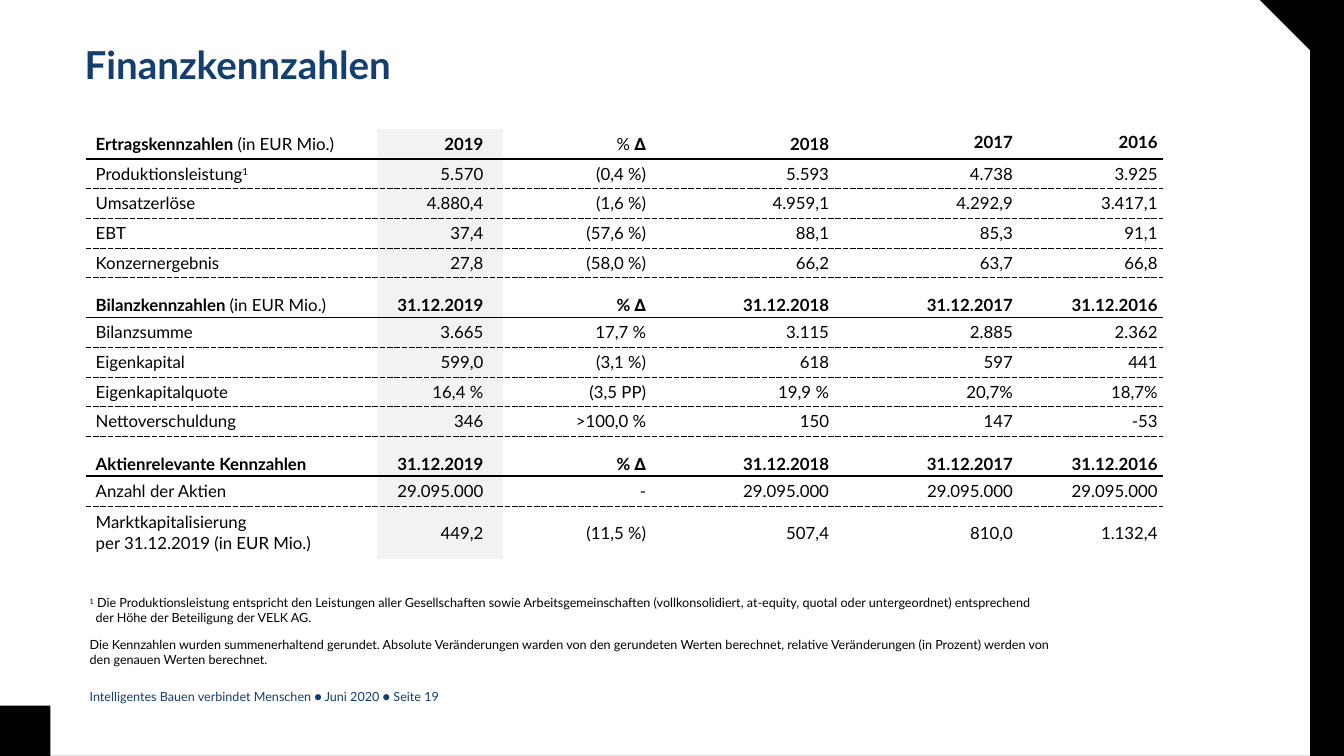
import math

import lxml.etree
import pptx
import pptx.dml.color
import pptx.enum.text
import pptx.oxml.ns
import pptx.util

Inches = pptx.util.Inches
Pt = pptx.util.Pt
ALIGN = pptx.enum.text.PP_ALIGN
ANCHOR = pptx.enum.text.MSO_ANCHOR
qn = pptx.oxml.ns.qn

COLORS = {"black": "000000", "navy": "143E6F", "shade": "F2F2F2"}
WIDTH, HEIGHT = 26.67, 15
UNIT = "(in EUR Mio.)"
BOLD, REGULAR, RAISED = {"bold": True}, {"bold": False}, {"baseline": 30}
DATES = ["31.12.2019", "% ∆", "31.12.2018", "31.12.2017", "31.12.2016"]

# Each section: heading runs, column headings, rows of label runs and values
SECTIONS = [
    ([("Ertragskennzahlen ", BOLD), (UNIT, REGULAR)],
     ["2019", [("% ", REGULAR), ("∆", BOLD)], "2018", "2017", "2016"],
     [([("Produktionsleistung", {}), ("1", RAISED)],
       ["5.570", "(0,4 %)", "5.593", "4.738", "3.925"]),
      ("Umsatzerlöse", ["4.880,4", "(1,6 %)", "4.959,1", "4.292,9", "3.417,1"]),
      ("EBT", ["37,4", "(57,6 %)", "88,1", "85,3", "91,1"]),
      ("Konzernergebnis", ["27,8", "(58,0 %)", "66,2", "63,7", "66,8"])]),
    ([("Bilanzkennzahlen ", BOLD), (UNIT, REGULAR)], DATES,
     [("Bilanzsumme", ["3.665", "17,7 %", "3.115", "2.885", "2.362"]),
      ("Eigenkapital", ["599,0", "(3,1 %)", "618", "597", "441"]),
      ("Eigenkapitalquote", ["16,4 %", "(3,5 PP)", "19,9 %", "20,7%", "18,7%"]),
      ("Nettoverschuldung", ["346", ">100,0 %", "150", "147", "-53"])]),
    ("Aktienrelevante Kennzahlen", DATES,
     [("Anzahl der Aktien",
       ["29.095.000", "-", "29.095.000", "29.095.000", "29.095.000"]),
      ("Marktkapitalisierung\nper 31.12.2019 (in EUR Mio.)",
       ["449,2", "(11,5 %)", "507,4", "810,0", "1.132,4"])]),
]
COLUMN_WIDTHS = [5.78, 2.5, 3.23, 3.63, 3.36, 2.87]
ROW_HEIGHT, SECTION_HEIGHT, LAST_HEIGHT = 0.59, 0.79, 1.06


def rgb(name):
    return pptx.dml.color.RGBColor.from_string(COLORS[name])


def write_runs(paragraph, content, size, color="black", bold=False):
    """Write a string or a list of (text, overrides); a newline breaks the line."""
    runs = [(content, {})] if isinstance(content, str) else content
    for text, overrides in runs:
        for index, line in enumerate(text.split("\n")):
            if index:
                paragraph.add_line_break()
            run = paragraph.add_run()
            run.text = line
            formats = {"name": "Lato", "size": Pt(size), "bold": overrides.get("bold", bold)}
            for attribute, value in formats.items():
                setattr(run.font, attribute, value)
            run.font.color.rgb = rgb(color)
            if "baseline" in overrides:
                run.font._element.set("baseline", str(overrides["baseline"] * 1000))


def add_text(slide, box, content, size, color="black", bold=False, inset=True):
    shape = slide.shapes.add_textbox(*map(Inches, box))
    frame = shape.text_frame
    frame.word_wrap = True
    if not inset:
        for side in ("left", "top", "right", "bottom"):
            setattr(frame, f"margin_{side}", 0)
    write_runs(frame.paragraphs[0], content, size, color, bold)
    return frame.paragraphs[0]


def add_frame(slide, box):
    """Black border whose opening is rounded at top right and bottom left."""
    left, top, width, height = box
    right, bottom = left + width, top + height
    inner_left, inner_top = left + 0.21, top + 0.14
    inner_right, inner_bottom = right - 0.21, bottom - 0.14
    radius, steps = 2.15, 40

    def arc(center_x, center_y, start):
        angles = [math.radians(start - 90 * step / steps) for step in range(steps + 1)]
        return [(center_x + radius * math.cos(angle), center_y + radius * math.sin(angle))
                for angle in angles]

    opening = [(inner_left, inner_top)]
    opening += arc(inner_left + radius, inner_bottom - radius, 180)
    opening += [(inner_right, inner_bottom)]
    opening += arc(inner_right - radius, inner_top + radius, 0)
    outline = [(left, top), (right, top), (right, bottom), (left, bottom)]

    builder = slide.shapes.build_freeform(*outline[0], scale=Inches(1))
    builder.add_line_segments(outline[1:])
    builder.move_to(*opening[0])
    builder.add_line_segments(opening[1:])
    shape = builder.convert_to_shape()
    shape.shadow.inherit = False
    shape.fill.solid()
    shape.fill.fore_color.rgb = rgb("black")
    shape.line.fill.background()


def set_borders(cell, top, bottom):
    """Top and bottom are (points, dash) or None; the sides stay open."""
    properties = cell._tc.get_or_add_tcPr()
    borders = {"a:lnL": None, "a:lnR": None, "a:lnT": top, "a:lnB": bottom}
    for index, (tag, border) in enumerate(borders.items()):
        line = lxml.etree.Element(qn(tag))
        properties.insert(index, line)
        if border is None:
            lxml.etree.SubElement(line, qn("a:noFill"))
            continue
        points, dash = border
        line.set("w", str(Pt(points)))
        fill = lxml.etree.SubElement(line, qn("a:solidFill"))
        lxml.etree.SubElement(fill, qn("a:srgbClr"), val=COLORS["black"])
        lxml.etree.SubElement(line, qn("a:prstDash"), val=dash)


def fill_cell(cell, content, column, heading, anchor):
    is_label, is_recent = column == 0, column < 4
    formats = {
        "margin_left": Inches(0.2 if is_label else 0.1),
        "margin_right": Inches(0.39 if is_recent and not is_label else 0.1),
        "margin_top": Inches(0.05),
        "margin_bottom": Inches(0.05),
        "vertical_anchor": anchor,
    }
    for attribute, value in formats.items():
        setattr(cell, attribute, value)
    paragraph = cell.text_frame.paragraphs[0]
    paragraph.alignment = ALIGN.LEFT if is_label else ALIGN.RIGHT
    if is_recent:
        paragraph.space_after = Pt(6)
    write_runs(paragraph, content, 24, bold=heading)
    if column == 1:
        cell.fill.solid()
        cell.fill.fore_color.rgb = rgb("shade")
    else:
        cell.fill.background()


def add_key_figures(slide, box):
    rows = []
    for title, headings, figures in SECTIONS:
        rows.append((True, [title, *headings]))
        rows += [(False, [label, *values]) for label, values in figures]
    last = len(rows) - 1
    table = slide.shapes.add_table(len(rows), len(COLUMN_WIDTHS), *map(Inches, box)).table
    table.first_row = table.horz_banding = False
    for column, width in zip(table.columns, COLUMN_WIDTHS):
        column.width = Inches(width)

    # A solid rule lies under each heading, a dashed one under each figure
    solid, dashed = (3, "solid"), (1, "sysDash")
    above = None
    for index, (heading, contents) in enumerate(rows):
        height = LAST_HEIGHT if index == last else ROW_HEIGHT
        if heading and index:
            height = SECTION_HEIGHT
        table.rows[index].height = Inches(height)
        below = solid if heading else None if index == last else dashed
        for column, content in enumerate(contents):
            anchor = ANCHOR.BOTTOM if heading and index else ANCHOR.MIDDLE
            if index == 0 and column > 3:
                anchor = ANCHOR.TOP
            cell = table.cell(index, column)
            fill_cell(cell, content, column, heading, anchor)
            set_borders(cell, above, below)
        above = below


def add_notes(slide, box):
    left, top, width, height = box
    footnote = add_text(slide, (left, top, width, height), [
        ("1", RAISED),
        (" Die Produktionsleistung entspricht den Leistungen aller Gesellschaften sowie "
         "Arbeitsgemeinschaften (vollkonsolidiert, at-equity, quotal oder untergeordnet) "
         "entsprechend\nder Höhe der Beteiligung der VELK AG.", {})], 18)
    hanging = Inches(0.12)
    footnote._p.get_or_add_pPr().set("marL", str(hanging))
    footnote._p.get_or_add_pPr().set("indent", str(-hanging))
    add_text(slide, (left, top + 0.82, width, height),
             "Die Kennzahlen wurden summenerhaltend gerundet. Absolute Veränderungen warden "
             "von den gerundeten Werten berechnet, relative Veränderungen (in Prozent) werden "
             "von den genauen Werten berechnet.", 18)


def main():
    presentation = pptx.Presentation()
    presentation.slide_width = Inches(WIDTH)
    presentation.slide_height = Inches(HEIGHT)
    slide = presentation.slides.add_slide(presentation.slide_layouts[6])

    add_frame(slide, (0, 0, WIDTH, HEIGHT))
    add_key_figures(slide, (1.7, 2.56, 21.38, 8.55))
    title = add_text(slide, (1.68, 0.96, 23.31, 1.73), "Finanzkennzahlen", 55, "navy",
                     bold=True, inset=False)
    title.line_spacing = 0.85
    add_text(slide, (1.68, 13.62, 11.55, 0.41),
             "Intelligentes Bauen verbindet Menschen ● Juni 2020 ● Seite 19", 18, "navy")
    add_notes(slide, (1.68, 11.76, 19.65, 0.71))
    presentation.save("out.pptx")


if __name__ == "__main__":
    main()
